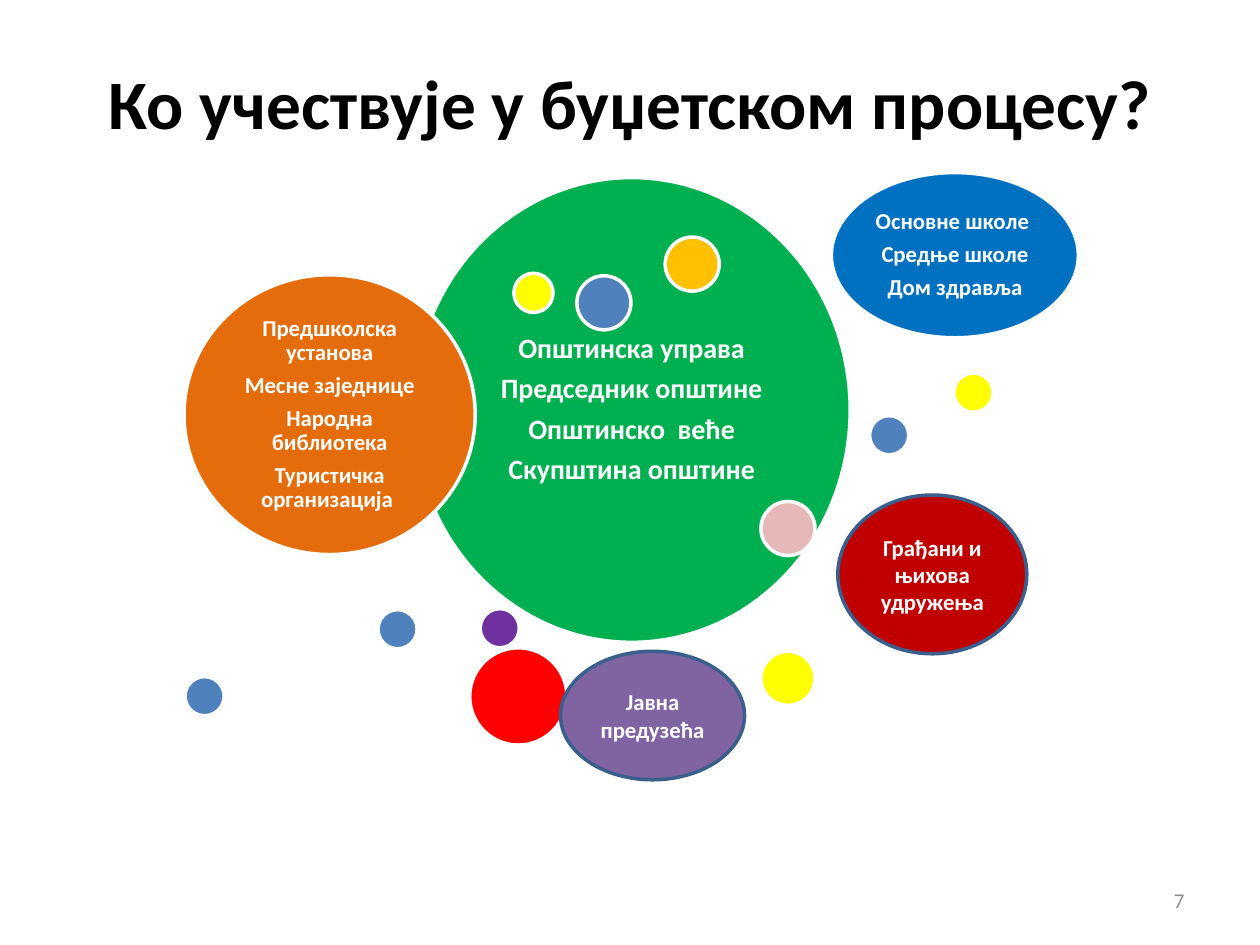
from dataclasses import dataclass

from pptx import Presentation
from pptx.dml.color import RGBColor
from pptx.enum.shapes import MSO_SHAPE as Shape
from pptx.enum.text import MSO_ANCHOR as Anchor, MSO_AUTO_SIZE as AutoSize, PP_ALIGN as Align
from pptx.util import Cm, Pt


@dataclass(frozen=True)
class Theme:
    font: str = "Calibri"
    black: str = "000000"
    white: str = "FFFFFF"
    grey: str = "8C8C8C"
    green: str = "00B050"
    orange: str = "E46C0A"
    amber: str = "FFC000"
    yellow: str = "FFFF00"
    red: str = "FF0000"
    dark_red: str = "C00000"
    pink: str = "E6B9B8"
    purple: str = "7030A0"
    violet: str = "8064A2"
    blue: str = "4F81BD"
    bright_blue: str = "0070C0"
    outline: str = "3A5F8C"
    title_size: float = 39.6
    core_size: float = 16
    label_size: float = 13
    number_size: float = 12
    line_width: float = 2


class SlideBuilder:
    """Holds the theme and the current slide."""

    def __init__(self, page, theme):
        self.page = page
        self.theme = theme

    def add_text(self, shape, lines, size, color, bold=True, align=Align.CENTER,
                 inset=None, spacing=1, after=0):
        frame = shape.text_frame
        frame_format = {"word_wrap": True, "auto_size": AutoSize.NONE,
                        "vertical_anchor": Anchor.MIDDLE}
        if inset is not None:
            for side in ("left", "top", "right", "bottom"):
                frame_format[f"margin_{side}"] = Cm(inset)
        self.apply(frame, frame_format)
        for index, line in enumerate(lines):
            para = frame.add_paragraph() if index else frame.paragraphs[0]
            self.apply(para, {"alignment": align, "line_spacing": spacing,
                              "space_before": Pt(0), "space_after": Pt(after)})
            span = para.add_run()
            span.text = line
            self.apply(span.font, {"name": self.theme.font, "size": Pt(size), "bold": bold})
            span.font.color.rgb = RGBColor.from_string(color)

    @staticmethod
    def apply(target, values):
        for name, value in values.items():
            setattr(target, name, value)

    def title(self, text, left, top, width, height):
        box = self.page.shapes.title
        self.apply(box, {"left": Cm(left), "top": Cm(top),
                         "width": Cm(width), "height": Cm(height)})
        self.add_text(box, [text], self.theme.title_size, self.theme.black)

    def page_number(self, text, left, top, width, height):
        box = self.page.shapes.add_textbox(Cm(left), Cm(top), Cm(width), Cm(height))
        self.add_text(box, [text], self.theme.number_size, self.theme.grey,
                      bold=False, align=Align.RIGHT)

    def ellipse(self, left, top, width, height, fill, line=None):
        oval = self.page.shapes.add_shape(
            Shape.OVAL, Cm(left), Cm(top), Cm(width), Cm(height))
        oval.shadow.inherit = False
        oval.fill.solid()
        oval.fill.fore_color.rgb = RGBColor.from_string(fill)
        oval.line.color.rgb = RGBColor.from_string(line or self.theme.white)
        oval.line.width = Pt(self.theme.line_width)
        return oval

    def dots(self, diameter, *places):
        for left, top, fill in places:
            self.ellipse(left, top, diameter, diameter, fill)

    def group_bubble(self, bounds, fill, lines, size, inset):
        """A bubble listing several participants, one per paragraph."""
        self.add_text(self.ellipse(*bounds, fill), lines, size, self.theme.white,
                      inset=inset, spacing=0.9, after=0.35 * size)

    def outlined_bubble(self, bounds, fill, text):
        self.add_text(self.ellipse(*bounds, fill, self.theme.outline), [text],
                      self.theme.label_size, self.theme.white)


def main():
    deck = Presentation()
    deck.slide_width, deck.slide_height = Cm(25.4), Cm(19.05)
    theme = Theme()
    page = deck.slides.add_slide(deck.slide_layouts[5])
    builder = SlideBuilder(page, theme)
    small, medium, large = 0.79, 1.09, 1.96

    # Heading and page number
    builder.title("Ко учествује у буџетском процесу?", 1.27, 0.76, 22.86, 2.57)
    builder.page_number("7", 18.2, 17.65, 5.93, 1.01)

    # Municipal bodies in the centre
    builder.group_bubble(
        (8.33, 3.58, 8.81, 9.37), theme.green,
        ["Општинска управа", "Председник општине", "Општинско  веће", "Скупштина општине"],
        theme.core_size, 0.18)

    # Dots behind the outer bubbles
    builder.dots(small,
                 (9.68, 12.27, theme.purple), (17.53, 8.38, theme.blue),
                 (10.36, 5.51, theme.yellow), (7.62, 12.29, theme.blue),
                 (3.73, 13.64, theme.blue), (19.23, 7.52, theme.yellow))
    builder.dots(medium,
                 (13.41, 4.78, theme.amber), (15.34, 13.13, theme.yellow),
                 (11.63, 5.56, theme.blue), (15.34, 10.11, theme.pink))
    builder.dots(large, (9.47, 13.06, theme.red))

    # Indirect budget users
    builder.group_bubble(
        (3.71, 5.54, 5.87, 5.64), theme.orange,
        ["Предшколска установа", "Месне заједнице", "Народна библиотека",
         "Туристичка организација "],
        theme.label_size, 0.13)
    builder.group_bubble(
        (16.76, 3.48, 4.98, 3.33), theme.bright_blue,
        ["Основне школе ", "Средње школе", "Дом здравља"],
        theme.label_size, 0.13)

    # Citizens and public companies
    builder.outlined_bubble((16.89, 9.98, 3.81, 3.2), theme.dark_red,
                            "Грађани и њихова удружења")
    builder.outlined_bubble((11.3, 13.13, 3.71, 2.59), theme.violet, "Јавна предузећа")

    deck.save("out.pptx")


if __name__ == "__main__":
    main()
